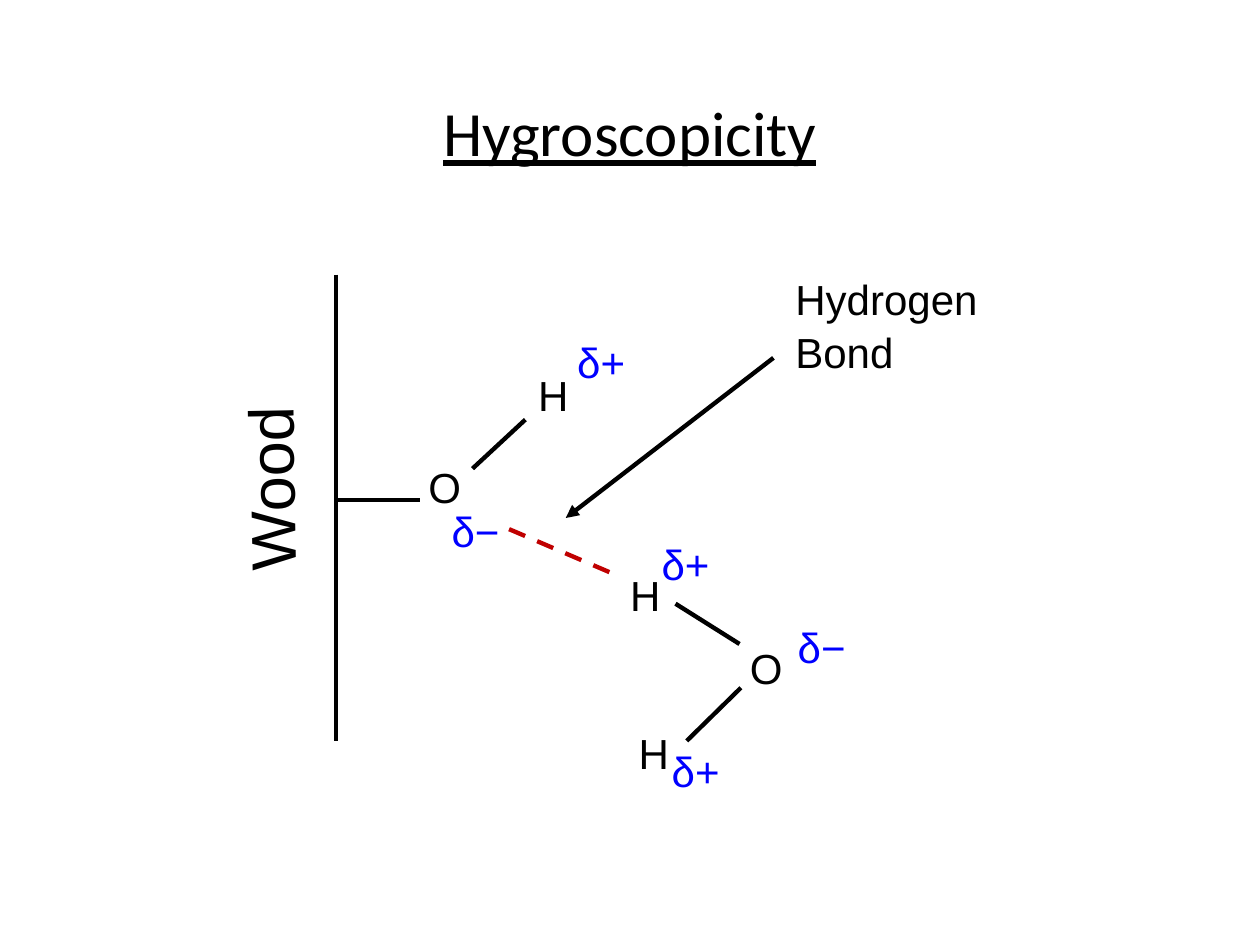
from dataclasses import dataclass

from lxml import etree
from pptx import Presentation
from pptx.dml.color import RGBColor
from pptx.enum.dml import MSO_LINE
from pptx.enum.shapes import MSO_CONNECTOR
from pptx.enum.text import MSO_ANCHOR, PP_ALIGN
from pptx.oxml.ns import qn
from pptx.util import Pt

STRAIGHT = MSO_CONNECTOR.STRAIGHT
DASH = MSO_LINE.DASH
MIDDLE, CENTER = MSO_ANCHOR.MIDDLE, PP_ALIGN.CENTER


@dataclass(frozen=True)
class Theme:
    ink: RGBColor = RGBColor(0x00, 0x00, 0x00)
    charge: RGBColor = RGBColor(0x00, 0x00, 0xFF)
    hydrogen_bond: RGBColor = RGBColor(0xC0, 0x00, 0x00)
    title_font: str = "Calibri"
    body_font: str = "Arial"
    large: int = 36
    normal: int = 24
    stroke: float = 2.5


theme = Theme()

deck = Presentation()
deck.slide_width, deck.slide_height = Pt(720), Pt(540)
page = deck.slides.add_slide(deck.slide_layouts[6])


def add_label(text, left, top, width, height, size=theme.normal,
              color=theme.ink, font=theme.body_font):
    box = page.shapes.add_textbox(Pt(left), Pt(top), Pt(width), Pt(height))
    frame = box.text_frame
    frame.word_wrap = True
    frame.margin_left = frame.margin_right = 0
    frame.margin_top = frame.margin_bottom = 0
    frame.text = text
    for para in frame.paragraphs:
        para.font.name = font
        para.font.size = Pt(size)
        para.font.color.rgb = color
    return box


def add_line(x1, y1, x2, y2, color=theme.ink):
    line = page.shapes.add_connector(STRAIGHT, Pt(x1), Pt(y1), Pt(x2), Pt(y2))
    line.line.color.rgb = color
    line.line.width = Pt(theme.stroke)
    etree.SubElement(line._element.spPr, qn("a:effectLst"))
    return line


# Title
title = add_label("Hygroscopicity", 54, 30, 612, 90, theme.large,
                  font=theme.title_font).text_frame
title.vertical_anchor = MIDDLE
title.paragraphs[0].alignment = CENTER
title.paragraphs[0].font.underline = True

# Wood surface
add_line(192, 157, 192, 423.5)
wood = add_label("Wood", 104.5, 244, 110, 54, theme.large)
wood.rotation = 269

# Atoms of the wood hydroxyl group and of the water molecule
for atom, left, top in [
    ("O", 244.8, 263.5), ("H", 307.5, 211),
    ("H", 360, 325.5), ("O", 428.5, 367.2), ("H", 365, 415.5),
]:
    add_label(atom, left, top, 46, 59)

# Partial charges
for charge, left, top in [
    ("δ+", 329.8, 192.2), ("δ−", 258, 288.7),
    ("δ+", 378, 307.5), ("δ−", 455.8, 355), ("δ+", 383.8, 426.2),
]:
    add_label(charge, left, top, 60, 52, color=theme.charge)

# Covalent bonds
for ends in [
    (192, 285.8, 240, 285.8), (270, 267.8, 300.2, 239.8),
    (386, 345, 422.6, 368), (423.4, 393, 392.4, 423.4),
]:
    add_line(*ends)

# Hydrogen bond with its callout
bond = add_line(290.9, 302.4, 351.4, 328.3, theme.hydrogen_bond)
bond.line.dash_style = DASH

callout = add_label("Hydrogen\nBond", 454.5, 156.2, 110, 78)
callout.text_frame.paragraphs[1].space_before = Pt(1.5)
arrow = add_line(442, 204.5, 323.3, 296)
etree.SubElement(arrow.line._get_or_add_ln(), qn("a:tailEnd"), type="triangle")

deck.save("out.pptx")
